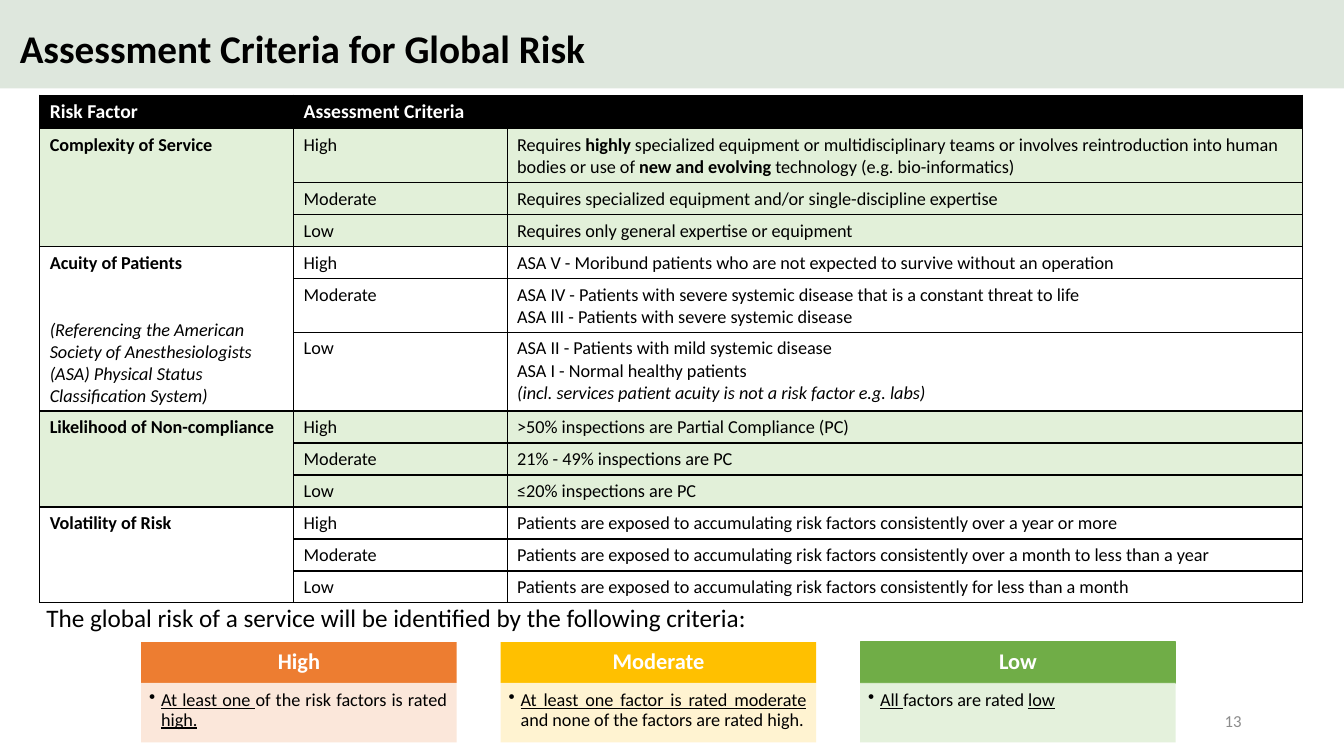
"""Build the slide on assessment criteria for global risk."""
import pptx
import pptx.dml.color
import pptx.enum.shapes
import pptx.enum.text
import pptx.oxml
import pptx.oxml.ns
import pptx.util
from lxml import etree

Cm = pptx.util.Cm
Pt = pptx.util.Pt
RGBColor = pptx.dml.color.RGBColor
ALIGN = pptx.enum.text.PP_ALIGN
ANCHOR = pptx.enum.text.MSO_ANCHOR

BLACK = RGBColor(0x00, 0x00, 0x00)
WHITE = RGBColor(0xFF, 0xFF, 0xFF)
GREY = RGBColor(0x8C, 0x8C, 0x8C)
SAGE = RGBColor(0xDE, 0xE7, 0xDD)
ORANGE = RGBColor(0xED, 0x7D, 0x31)
PEACH = RGBColor(0xFB, 0xE5, 0xD6)
AMBER = RGBColor(0xFF, 0xC0, 0x00)
CREAM = RGBColor(0xFF, 0xF2, 0xCC)
GREEN = RGBColor(0x70, 0xAD, 0x47)
MINT = RGBColor(0xE2, 0xF0, 0xD9)

FONT = "Calibri"
TITLE = "Assessment Criteria for Global Risk"
SUMMARY = "The global risk of a service will be identified by the following criteria:"
PAGE_NUMBER = "13"
HEADINGS = ["Risk Factor", "Assessment Criteria"]
LEVELS = ["High", "Moderate", "Low"]

FACTORS = [
    ([[("Complexity of Service", "b")]], MINT, [
        [[("Requires ", ""), ("highly", "b"),
          (" specialized equipment or multidisciplinary teams or involves "
           "reintroduction into human bodies or use of ", ""),
          ("new and evolving", "b"), (" technology (e.g. bio-informatics)", "")]],
        [[("Requires specialized equipment and/or single-discipline expertise", "")]],
        [[("Requires only general expertise or equipment", "")]],
    ]),
    ([[("Acuity of Patients", "b")],
      [("(Referencing the American Society of Anesthesiologists (ASA) "
        "Physical Status Classification System)", "i")]], WHITE, [
        [[("ASA V - Moribund patients who are not expected to survive "
           "without an operation", "")]],
        [[("ASA IV - Patients with severe systemic disease that is a "
           "constant threat to life", "")],
         [("ASA III - Patients with severe systemic disease", "")]],
        [[("ASA II - Patients with mild systemic disease", "")],
         [("ASA I - Normal healthy patients", "")],
         [("(incl. services patient acuity is not a risk factor e.g. labs)", "i")]],
    ]),
    ([[("Likelihood of Non-compliance", "b")]], MINT, [
        [[(">50% inspections are Partial Compliance (PC)", "")]],
        [[("21% - 49% inspections are PC", "")]],
        [[("≤20% inspections are PC", "")]],
    ]),
    ([[("Volatility of Risk", "b")]], WHITE, [
        [[("Patients are exposed to accumulating risk factors consistently "
           "over a year or more", "")]],
        [[("Patients are exposed to accumulating risk factors consistently "
           "over a month to less than a year", "")]],
        [[("Patients are exposed to accumulating risk factors consistently "
           "for less than a month", "")]],
    ]),
]

CARDS = [
    (ORANGE, PEACH, [("At least one ", "u"), ("of the risk factors is rated ", ""),
                     ("high.", "u")]),
    (AMBER, CREAM, [("At least one factor is rated moderate", "u"),
                    (" and none of the factors are rated high.", "")]),
    (GREEN, MINT, [("All ", "u"), ("factors are rated ", ""), ("low", "u")]),
]

COLUMN_WIDTHS = [6.4, 5.38, 20.04]
ROW_HEIGHTS = [0.76, 1.22, 0.74, 0.74, 0.74, 1.22, 1.75] + [0.74] * 6
CARD_LEFT, CARD_STEP, CARD_WIDTH = 3.56, 9.06, 7.95
CARD_TOP, HEAD_HEIGHT, BODY_HEIGHT = 16.18, 1.03, 1.5


def write(frame, paragraphs, size, color=BLACK, align=ALIGN.LEFT, spacing=None):
    for index, spans in enumerate(paragraphs):
        para = frame.add_paragraph() if index else frame.paragraphs[0]
        para.alignment = align
        para.line_spacing = spacing
        for text, style in spans:
            span = para.add_run()
            span.text = text
            span.font.name = FONT
            span.font.size = Pt(size)
            span.font.color.rgb = color
            span.font.bold = "b" in style
            span.font.italic = "i" in style
            span.font.underline = "u" in style


def add_text(page, place, text, size, style="", anchor=ANCHOR.TOP, **options):
    box = page.shapes.add_textbox(*map(Cm, place))
    box.text_frame.word_wrap = True
    box.text_frame.vertical_anchor = anchor
    write(box.text_frame, [[(text, style)]], size, **options)


def add_block(page, place, fill):
    block = page.shapes.add_shape(
        pptx.enum.shapes.MSO_SHAPE.RECTANGLE, *map(Cm, place))
    block.shadow.inherit = False
    block.fill.solid()
    block.fill.fore_color.rgb = fill
    block.line.fill.background()
    return block


def set_margins(frame, left, top, right, bottom):
    frame.word_wrap = True
    frame.margin_left, frame.margin_top = Cm(left), Cm(top)
    frame.margin_right, frame.margin_bottom = Cm(right), Cm(bottom)


def style_cell(cell, fill):
    cell.fill.solid()
    cell.fill.fore_color.rgb = fill
    properties = cell._tc.get_or_add_tcPr()
    for index, side in enumerate(("lnL", "lnR", "lnT", "lnB")):
        border = pptx.oxml.parse_xml(
            f'<a:{side} {pptx.oxml.ns.nsdecls("a")} w="12700"><a:solidFill>'
            f'<a:srgbClr val="{BLACK}"/></a:solidFill></a:{side}>')
        properties.insert(index, border)


def add_criteria_table(page):
    table = page.shapes.add_table(
        len(ROW_HEIGHTS), len(COLUMN_WIDTHS), Cm(1), Cm(2.4),
        Cm(sum(COLUMN_WIDTHS)), Cm(sum(ROW_HEIGHTS))).table
    for column, width in zip(table.columns, COLUMN_WIDTHS):
        column.width = Cm(width)
    for row, height in zip(table.rows, ROW_HEIGHTS):
        row.height = Cm(height)
    fills = [BLACK] + [fill for _, fill, _ in FACTORS for _ in LEVELS]
    for row, fill in zip(table.rows, fills):
        for cell in row.cells:
            style_cell(cell, fill)

    table.cell(0, 1).merge(table.cell(0, 2))
    for column, heading in enumerate(HEADINGS):
        write(table.cell(0, column).text_frame, [[(heading, "b")]], 14, WHITE)
    for index, (name, _, criteria) in enumerate(FACTORS):
        first = 1 + index * len(LEVELS)
        factor = table.cell(first, 0)
        factor.merge(table.cell(first + len(LEVELS) - 1, 0))
        write(factor.text_frame, name, 13)
        for note in factor.text_frame.paragraphs[1:]:
            note.space_before = Pt(32)
        for row, (level, criterion) in enumerate(zip(LEVELS, criteria), first):
            write(table.cell(row, 1).text_frame, [[(level, "")]], 13)
            write(table.cell(row, 2).text_frame, criterion, 13)


def add_card(page, left, level, head_fill, body_fill, rule):
    head = add_block(page, (left, CARD_TOP, CARD_WIDTH, HEAD_HEIGHT), head_fill)
    set_margins(head.text_frame, 0.3, 0.18, 0.3, 0.18)
    head.text_frame.vertical_anchor = ANCHOR.MIDDLE
    write(head.text_frame, [[(level, "b")]], 16, WHITE, ALIGN.CENTER, 0.9)

    body = add_block(
        page, (left, CARD_TOP + HEAD_HEIGHT, CARD_WIDTH, BODY_HEIGHT), body_fill)
    color = body.fill._xPr.find(".//" + pptx.oxml.ns.qn("a:srgbClr"))
    etree.SubElement(color, pptx.oxml.ns.qn("a:alpha")).set("val", "90000")
    set_margins(body.text_frame, 0.2, 0.2, 0.25, 0.28)
    body.text_frame.vertical_anchor = ANCHOR.TOP
    write(body.text_frame, [rule], 13, BLACK, ALIGN.JUSTIFY, 0.9)
    properties = body.text_frame.paragraphs[0]._p.get_or_add_pPr()
    properties.set("marL", str(Cm(0.3)))
    properties.set("indent", str(Cm(-0.3)))
    etree.SubElement(properties, pptx.oxml.ns.qn("a:buChar")).set("char", "•")
    return head


def main():
    deck = pptx.Presentation()
    deck.slide_width, deck.slide_height = Cm(33.87), Cm(19.05)
    page = deck.slides.add_slide(deck.slide_layouts[6])
    add_block(page, (0, 0, 33.87, 2.23), SAGE)
    add_text(page, (0.25, 0.36, 33.3, 1.85), TITLE, 28, "b", ANCHOR.MIDDLE, spacing=0.9)
    add_text(page, (0.92, 15.06, 28.88, 1.03), SUMMARY, 18, align=ALIGN.JUSTIFY)
    for index, (level, card) in enumerate(zip(LEVELS, CARDS)):
        head = add_card(page, CARD_LEFT + index * CARD_STEP, level, *card)
    head.line.color.rgb = GREEN
    head.line.width = Pt(1)
    add_criteria_table(page)
    add_text(page, (23.92, 17.66, 7.62, 1.01), PAGE_NUMBER, 12, "", ANCHOR.MIDDLE,
             color=GREY, align=ALIGN.RIGHT)
    deck.save("out.pptx")


if __name__ == "__main__":
    main()
